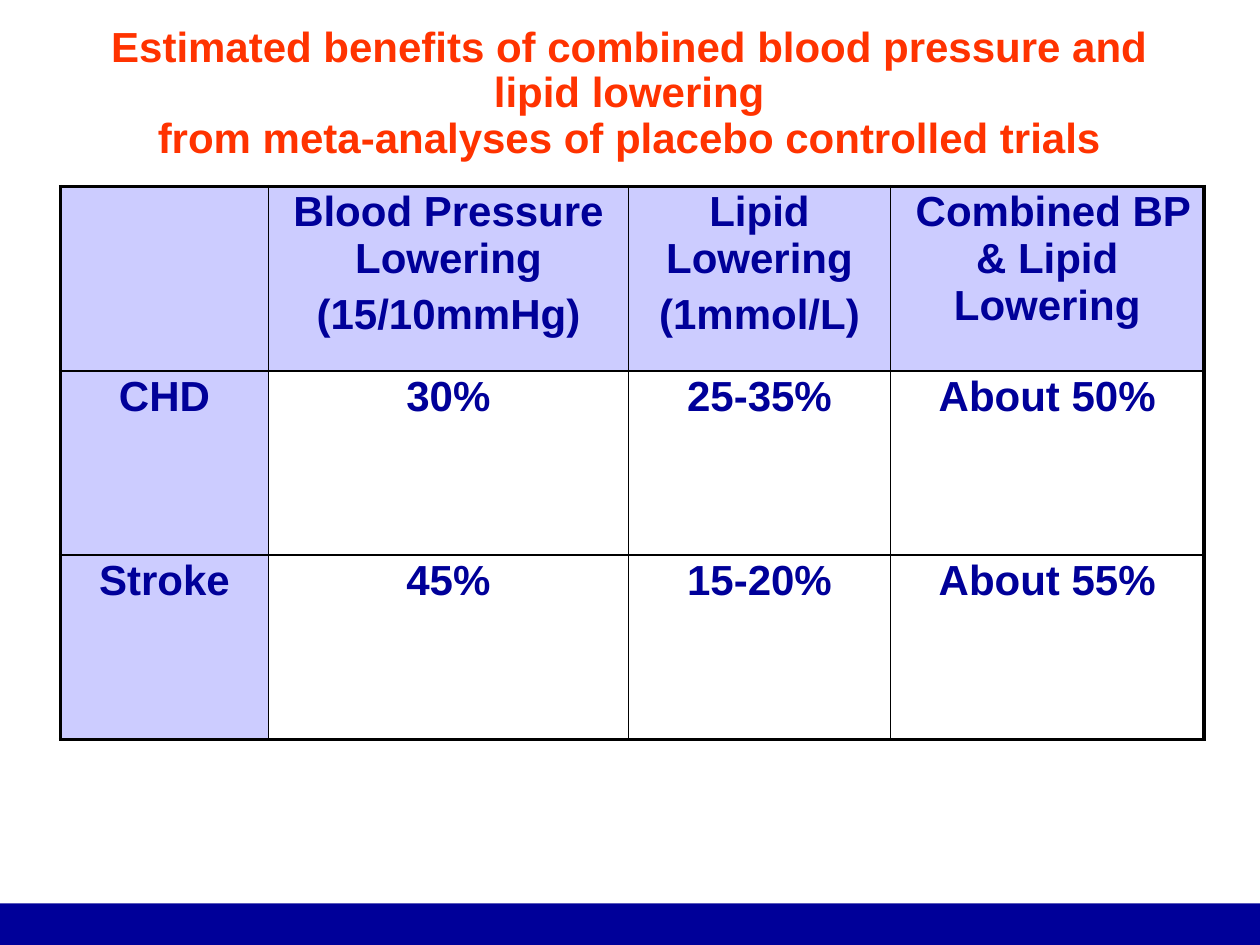
from lxml import etree
from pptx import Presentation
from pptx import util as u
from pptx.dml.color import RGBColor
from pptx.enum import shapes, text
from pptx.oxml.ns import qn

NAVY, ORANGE, LILAC, BLACK = "000099", "FF3300", "CCCCFF", "000000"
TITLE = ("Estimated benefits of combined blood pressure and lipid lowering\v"
         "from meta-analyses of placebo controlled trials")
COLUMNS = [4.19, 7.26, 5.28, 6.32]
ROWS = [
    ["", "Blood Pressure Lowering\n(15/10mmHg)", "Lipid Lowering\n(1mmol/L)",
     " Combined BP & Lipid Lowering"],
    ["CHD", "30%", "25-35%", "About 50%"],
    ["Stroke", "45%", "15-20%", "About 55%"],
]
FONT = {"name": "Arial", "size": u.Pt(24), "bold": True}
NO_MARGINS = dict.fromkeys(
    ["margin_left", "margin_top", "margin_right", "margin_bottom"], 0)
CELL_MARGINS = dict.fromkeys(NO_MARGINS, u.Cm(0.05))


def colour(value):
    return RGBColor.from_string(value)


def apply(target, values):
    for name, value in values.items():
        setattr(target, name, value)


def format_text(para, tint, **values):
    apply(para, {"alignment": text.PP_ALIGN.CENTER, **values})
    apply(para.font, FONT)
    para.font.color.rgb = colour(tint)


def place(shape, box):
    apply(shape, dict(zip(["left", "top", "width", "height"], map(u.Cm, box))))


def add_title(page, box):
    title = page.shapes.title
    place(title, box)
    frame = title.text_frame
    apply(frame, {**NO_MARGINS, "word_wrap": True,
                  "auto_size": text.MSO_AUTO_SIZE.NONE,
                  "vertical_anchor": text.MSO_ANCHOR.TOP})
    frame.text = TITLE
    format_text(frame.paragraphs[0], ORANGE, line_spacing=0.9, space_before=u.Pt(0))


def add_footer_band(page, box):
    band = page.shapes.add_shape(shapes.MSO_SHAPE.RECTANGLE, *map(u.Cm, box))
    band.shadow.inherit = False
    band.fill.solid()
    band.fill.fore_color.rgb = colour(NAVY)
    band.line.fill.background()


def add_border(cell, side, points):
    line = etree.SubElement(cell._tc.get_or_add_tcPr(), qn(f"a:ln{side}"),
                            w=str(u.Pt(points)))
    fill = etree.SubElement(line, qn("a:solidFill"))
    etree.SubElement(fill, qn("a:srgbClr"), val=BLACK)


def fill_cell(cell, words, header, outer_sides):
    apply(cell, CELL_MARGINS)
    cell.vertical_anchor = text.MSO_ANCHOR.TOP
    cell.text_frame.text = words
    for index, para in enumerate(cell.text_frame.paragraphs):
        format_text(para, NAVY, space_before=u.Pt(4.8 if index else 0))
    for side, outer in outer_sides.items():
        add_border(cell, side, 2.25 if outer else 1)
    if header:
        cell.fill.solid()
        cell.fill.fore_color.rgb = colour(LILAC)
    else:
        cell.fill.background()


def add_benefits_table(page, box):
    last_row, last_column = len(ROWS) - 1, len(COLUMNS) - 1
    table = page.shapes.add_table(len(ROWS), len(COLUMNS), *map(u.Cm, box)).table
    apply(table, {"first_row": False, "horz_banding": False})
    for column, width in zip(table.columns, COLUMNS):
        column.width = u.Cm(width)
    for r, labels in enumerate(ROWS):
        table.rows[r].height = u.Cm(box[3] / len(ROWS))
        for c, words in enumerate(labels):
            outer_sides = {"L": c == 0, "R": c == last_column,
                           "T": r == 0, "B": r == last_row}
            fill_cell(table.cell(r, c), words, r == 0 or c == 0, outer_sides)


def main():
    deck = Presentation()
    apply(deck, {"slide_width": u.Cm(25.4), "slide_height": u.Cm(19.05)})
    page = deck.slides.add_slide(deck.slide_layouts[5])
    add_footer_band(page, (0, 18.21, 25.4, 0.84))
    add_title(page, (2.13, 0.53, 21.11, 1.65))
    add_benefits_table(page, (1.22, 3.76, sum(COLUMNS), 11.15))
    deck.save("out.pptx")


if __name__ == "__main__":
    main()
